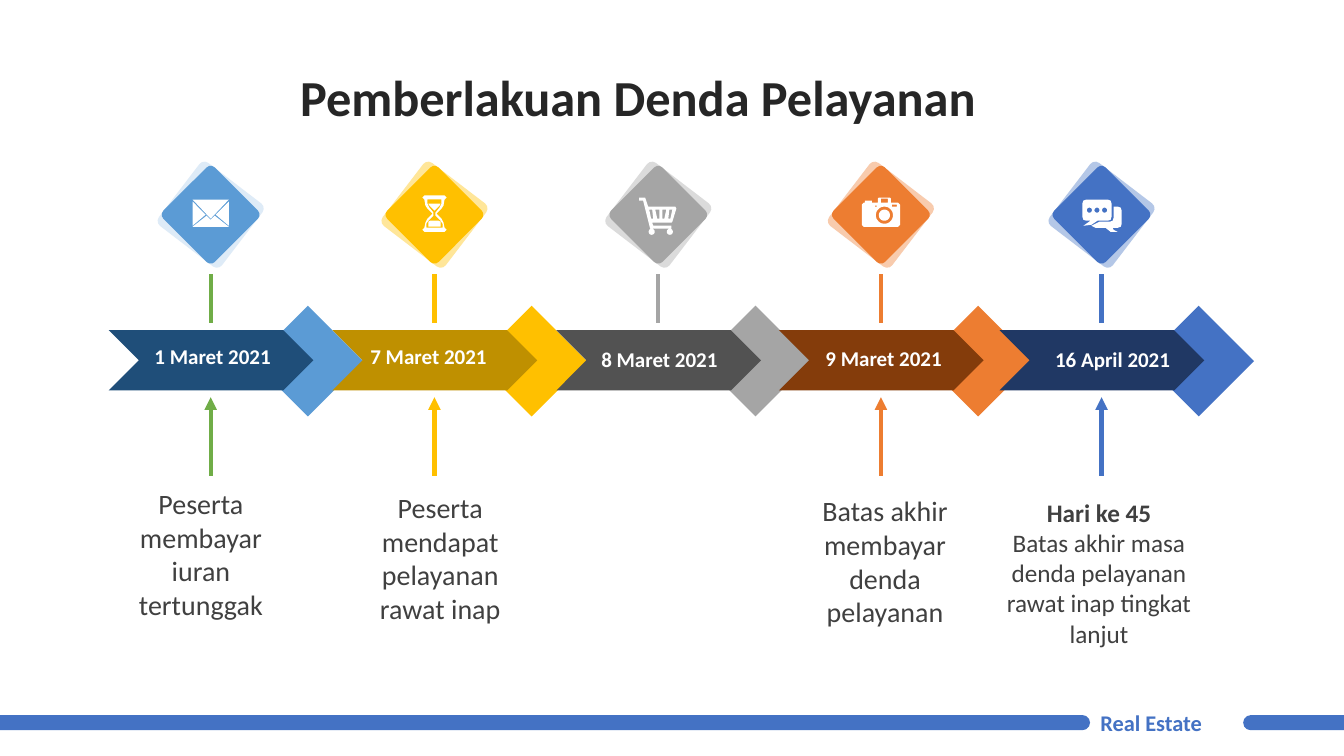
from dataclasses import dataclass
from math import cos, pi, sin

from lxml.etree import SubElement
from pptx import Presentation
from pptx.dml.color import RGBColor
from pptx.enum.shapes import MSO_CONNECTOR as Line, MSO_SHAPE as Shape
from pptx.enum.text import MSO_ANCHOR as Anchor, PP_ALIGN as Align
from pptx.oxml.ns import qn
from pptx.util import Cm, Pt

COLORS = {
    "white": "FFFFFF", "title": "262626", "body": "404040",
    "blue": "4472C4", "blue_dark": "203864", "blue_pale": "B4C7E7",
    "sky": "5B9BD5", "sky_dark": "1F4E79", "sky_pale": "DEEBF7",
    "gold": "FFC000", "gold_dark": "BF9000", "gold_pale": "FFE699",
    "gray": "A5A5A5", "gray_dark": "525252", "gray_pale": "DBDBDB",
    "orange": "ED7D31", "orange_dark": "843C0B", "orange_pale": "F8CBAD",
    "green": "70AD47",
}


def rgb(name):
    return RGBColor.from_string(COLORS[name])


def write(holder, text, size=20, color="body", bold=False, align=Align.CENTER,
          anchor=Anchor.TOP, spacing=None):
    frame = holder.text_frame
    frame.word_wrap = True
    frame.vertical_anchor = anchor
    paragraph = frame.paragraphs[0]
    paragraph.alignment = align
    paragraph.line_spacing = spacing
    run = paragraph.add_run()
    run.text = text
    run.font.name = "Calibri"
    run.font.size = Pt(size)
    run.font.bold = bold
    run.font.color.rgb = rgb(color)


# Icon outlines, in hundredths of an inch around the tile centre
def circle(x, y, radius, steps=32):
    return [(x + radius * cos(2 * pi * i / steps), y + radius * sin(2 * pi * i / steps))
            for i in range(steps)]


def box(left, top, right, bottom, cut=0):
    return [(left + cut, top), (right - cut, top), (right, top + cut), (right, bottom - cut),
            (right - cut, bottom), (left + cut, bottom), (left, bottom - cut), (left, top + cut)]


def mirrored(right_half):
    return right_half + [(-x, y) for x, y in reversed(right_half)]


ENVELOPE = [
    [(4, 1), (18, 12), (-18, 12), (-4, 1), (0, 5)],
    [(18, -13), (18, 11), (5, 0)],
    [(-18, -13), (-5, 0), (-18, 11)],
    [(-18, -15), (18, -15), (0, 4)],
]
HOURGLASS = [mirrored(half) for half in (
    [(10, -19), (12, -17), (10, -15), (9, -9), (7, -6), (2, -1),
     (7, 4), (9, 8), (10, 13), (12, 15), (10, 17)],
    [(7, -15), (7, -11), (5, -7), (1, -2), (1, 1), (6, 6), (8, 9), (8, 13)],
    [(6, -11), (5, -9), (0, -4)],
    [(4, 6), (6, 7), (6, 12)],
)]
CART = [
    [(-13, -17), (-10, -8), (17, -8), (18, -6), (14, 7), (13, 8), (-6, 8), (-5, 11),
     (13, 11), (13, 14), (-8, 14), (-15, -14), (-19, -14), (-19, -17)],
    [(11, -5), (10, 4), (12, 4), (14, -5)],
    [(4, -5), (4, 4), (6, 4), (8, -5)],
    [(-3, -5), (-1, 4), (1, 4), (1, -5)],
    [(-9, -5), (-7, 4), (-5, 4), (-6, -5)],
    circle(-6.5, 17, 3), circle(11.5, 17, 3),
]
CAMERA = [
    box(-19, -12, 19, 12, cut=2),
    [(-3, -12), (-3, -16), (-2, -17), (9, -17), (10, -16), (10, -12),
     (7, -12), (7, -16), (0, -16), (0, -12)],
    box(-16, -14, -9, -12), box(-6, -9, -4, -8), box(11, -10, 16, -8),
    circle(3.5, 0.5, 8.5), circle(3.5, 0.5, 5.5),
]
CHAT = [
    [(-15, -15), (6, -15), (9, -14), (10, -11), (10, 2), (9, 5), (6, 6), (-4, 6), (-10, 10),
     (-18, 11), (-11, 6), (-15, 6), (-18, 5), (-19, 2), (-19, -11), (-18, -14)],
    [(12, -8), (16, -8), (19, -7), (20, -4), (20, 9), (19, 12), (16, 13), (11, 13), (12, 15),
     (16, 17), (9, 17), (4, 13), (-6, 13), (-10, 11), (-2, 7), (8, 7), (11, 6), (12, 3)],
    *[circle(-12 + 7.5 * i, -4.5, 2.5) for i in range(3)],
]


@dataclass
class Timeline:
    slide: object

    def paint(self, shape, color):
        shape.shadow.inherit = False
        shape.fill.solid()
        shape.fill.fore_color.rgb = rgb(color)
        shape.line.fill.background()
        return shape

    def block(self, kind, x, y, width, height, color, rotation=0, adjust=()):
        """Preset shape centred on x, y."""
        shape = self.slide.shapes.add_shape(
            kind, Cm(x - width / 2), Cm(y - height / 2), Cm(width), Cm(height))
        shape.rotation = rotation
        for i, value in enumerate(adjust):
            shape.adjustments[i] = value
        return self.paint(shape, color)

    def text(self, left, top, width, height, content, **style):
        holder = self.slide.shapes.add_textbox(Cm(left), Cm(top), Cm(width), Cm(height))
        write(holder, content, **style)

    def stem(self, x, top, bottom, color, arrow=False):
        stem = self.slide.shapes.add_connector(
            Line.STRAIGHT, Cm(x), Cm(top), Cm(x), Cm(bottom))
        stem.line.width = Pt(3)
        stem.line.color.rgb = rgb(color)
        if arrow:
            SubElement(stem.line._get_or_add_ln(), qn("a:headEnd"), type="triangle")
        SubElement(stem._element.spPr, qn("a:effectLst"))

    def icon(self, x, y, outlines):
        fine = 10
        builder = None
        for outline in outlines:
            points = [(px * fine, py * fine) for px, py in outline]
            if builder is None:
                builder = self.slide.shapes.build_freeform(
                    *points[0], scale=Cm(2.54) / 100 / fine)
            else:
                builder.move_to(*points[0])
            builder.add_line_segments(points[1:], close=True)
        self.paint(builder.convert_to_shape(Cm(x), Cm(y)), "white")


# Centre, hue, stem colour, icon, date, date box (left, top, width), has an arrow below
STEPS = [
    (5.31, "sky", "green", ENVELOPE, "1 Maret 2021", (3.58, 8.53, 3.56), True),
    (10.95, "gold", "gold", HOURGLASS, "7 Maret 2021", (8.59, 8.53, 4.42), True),
    (16.59, "gray", "gray", CART, "8 Maret 2021", (14.55, 8.61, 4.14), False),
    (22.2, "orange", "orange", CAMERA, "9 Maret 2021", (19.96, 8.59, 4.62), True),
    (27.76, "blue", "blue", CHAT, "16 April 2021", (26.11, 8.61, 3.86), True),
]
NOTES = [
    (2.74, 12.14, 4.65, "Peserta membayar iuran tertunggak"),
    (9.14, 12.24, 3.91, "Peserta mendapat pelayanan rawat inap"),
    (20.35, 12.32, 3.91, "Batas akhir membayar denda pelayanan"),
]


def main():
    deck = Presentation()
    deck.slide_width, deck.slide_height = Cm(33.87), Cm(19.05)
    timeline = Timeline(deck.slides.add_slide(deck.slide_layouts[6]))

    # Footer
    for x, length, rotation in ((13.73, 27.48, 90), (32.6, 2.54, 270)):
        timeline.block(Shape.ROUND_2_SAME_RECTANGLE, x, 18.21, 0.38, length, "blue",
                       rotation, (0.5, 0))
    timeline.text(27.48, 17.73, 3.84, 0.94, "Real Estate", size=16, color="blue",
                  bold=True, align=Align.JUSTIFY, anchor=Anchor.MIDDLE)

    # Title
    timeline.text(0, 1.52, 32.16, 2.01, "Pemberlakuan Denda Pelayanan", size=36,
                  color="title", bold=True, anchor=Anchor.MIDDLE, spacing=0.9)

    # Notes below the arrows
    for left, top, width, content in NOTES:
        timeline.text(left, top, width, 3.68, content)
    day_45 = timeline.block(Shape.RECTANGLE, 27.7, 12.91, 5.51, 1.02, "white")
    write(day_45, "Hari ke 45", size=18, bold=True)
    timeline.text(24.94, 13.16, 5.51, 4.11,
                  "Batas akhir masa denda pelayanan rawat inap tingkat lanjut", size=18)

    # Timeline steps
    for x, hue, stem_color, icon, date, (left, top, width), has_arrow in STEPS:
        timeline.block(Shape.DIAMOND, x + 2.45, 9.1, 2.79, 2.79, hue)
        timeline.block(Shape.CHEVRON, x + 0.01, 9.08, 5.16, 1.52, hue + "_dark")
        timeline.text(left, top, width, 0.89, date, size=15, color="white", bold=True)
        timeline.stem(x, 6.91, 8.15, stem_color)
        if has_arrow:
            timeline.stem(x, 10.01, 11.99, stem_color, arrow=True)
        for side, rotation, color in ((2, 307.4, hue + "_pale"), (1.83, 315, hue)):
            timeline.block(Shape.ROUNDED_RECTANGLE, x, 5.41, side, side, color,
                           rotation, (0.08,))
        timeline.icon(x, 5.41, icon)

    deck.save("out.pptx")


if __name__ == "__main__":
    main()
